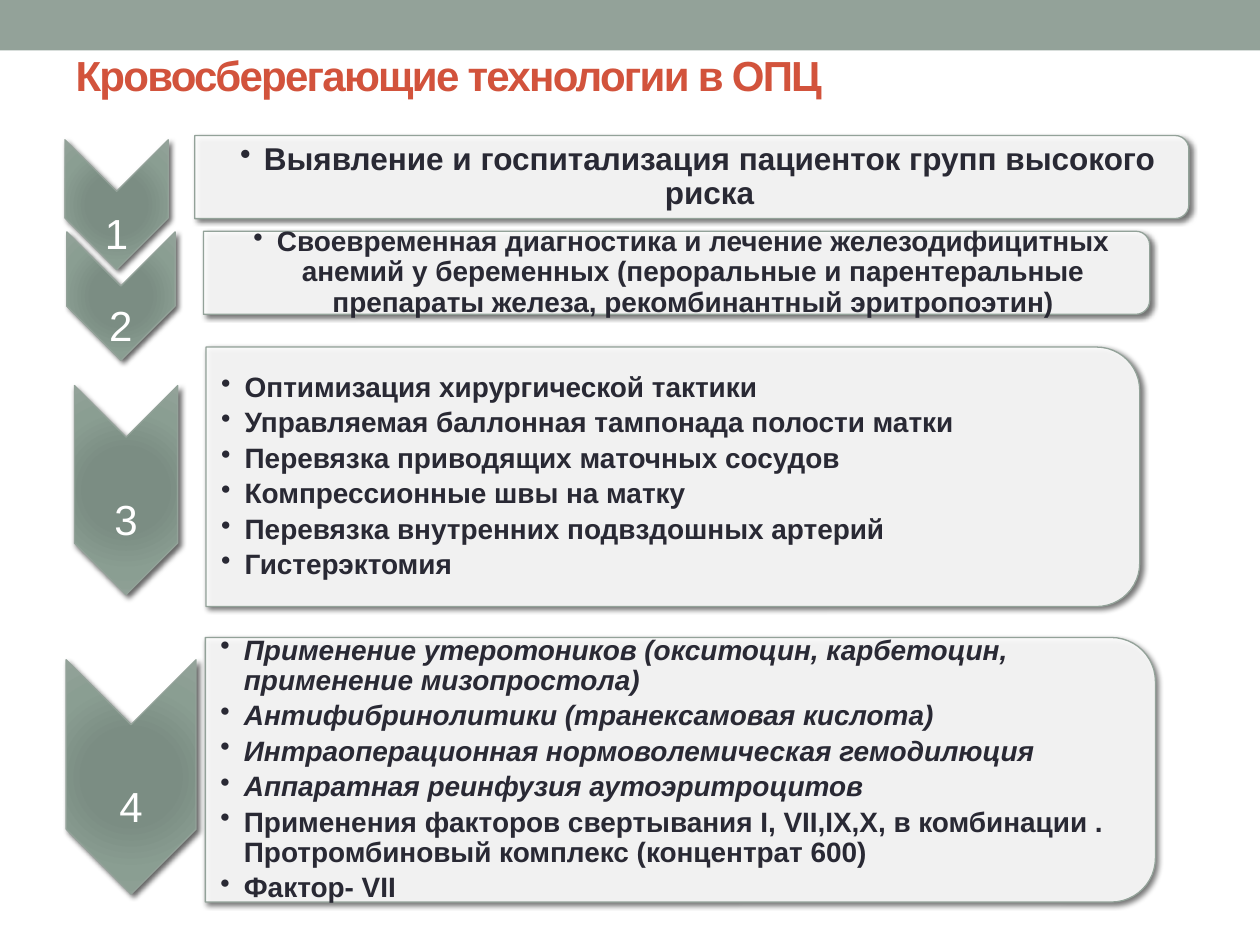
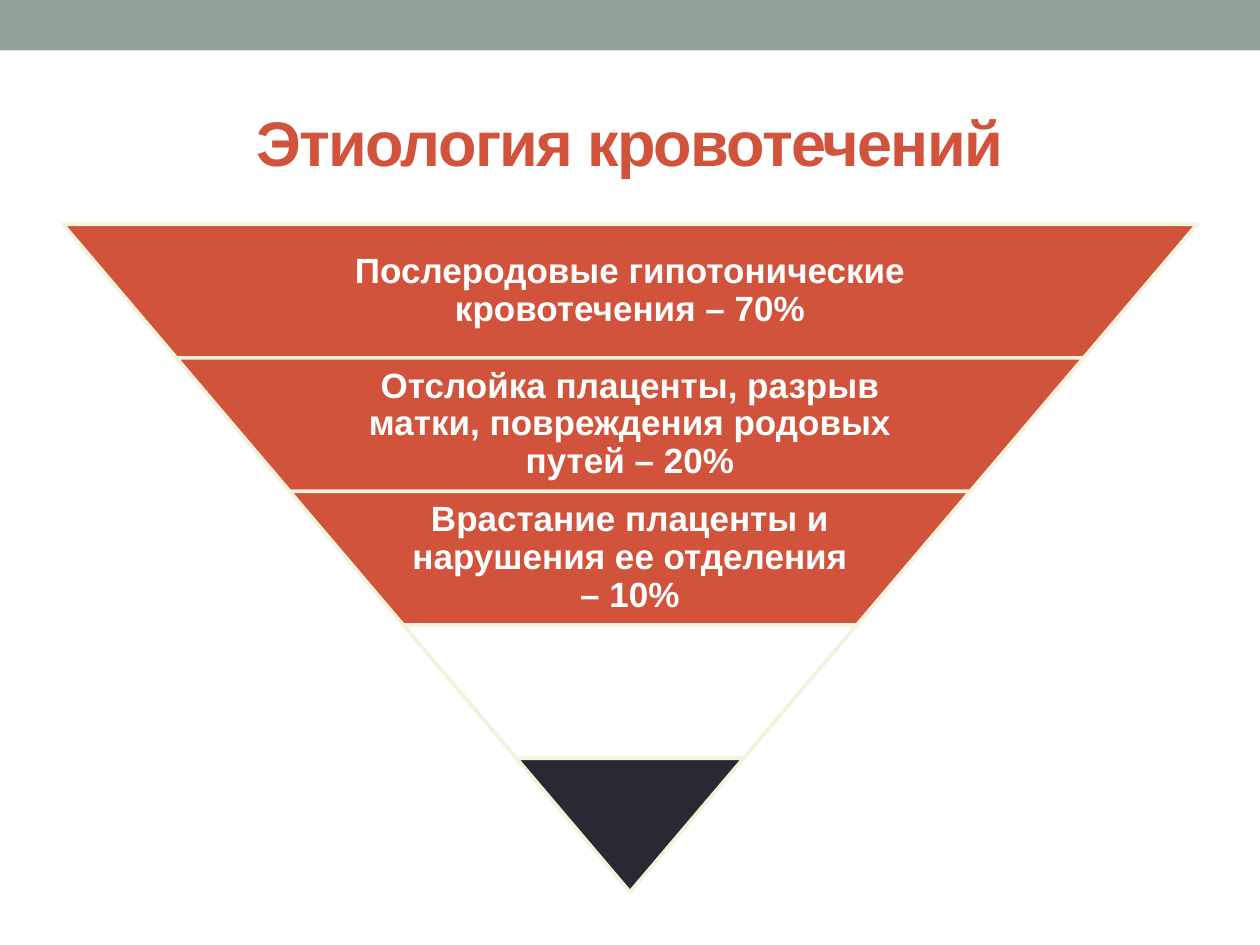
"""Build two slides on blood-saving methods and the causes of haemorrhage."""
from pptx import Presentation
from pptx.dml.color import RGBColor
from pptx.enum.shapes import MSO_SHAPE
from pptx.enum.text import MSO_ANCHOR, MSO_AUTO_SIZE, PP_ALIGN
from pptx.oxml import parse_xml
from pptx.oxml.ns import nsdecls, qn
from pptx.util import Pt

FONT = "Arial"
SAGE = "93A299"
RED = "D2533C"
INK = "292934"
WHITE = "FFFFFF"
CREAM = "F3F2DC"

CHEVRON_STOPS = [(0, "7B8E82"), (34, "7B8D83"), (70, "8A9E92"), (100, SAGE)]
CHEVRON_GRADIENT = (
    f'<a:gradFill {nsdecls("a")} rotWithShape="1"><a:gsLst>'
    + "".join(
        f'<a:gs pos="{position * 1000}"><a:srgbClr val="{color}"/></a:gs>'
        for position, color in CHEVRON_STOPS
    )
    + '</a:gsLst><a:path path="circle">'
    '<a:fillToRect l="100000" t="100000" r="100000" b="100000"/>'
    "</a:path></a:gradFill>"
)
SHADOW = (
    f'<a:outerShdw {nsdecls("a")} blurRad="38100" dist="25400" dir="2700000" '
    'rotWithShape="0"><a:srgbClr val="000000"><a:alpha val="60000"/></a:srgbClr></a:outerShdw>'
)
OPACITY = f'<a:alpha {nsdecls("a")} val="90000"/>'


def add_turned(slide, kind, center_x, center_y, width, height, rotation, fill, line, line_width):
    """Add a rotated shape around its centre."""
    shape = slide.shapes.add_shape(
        kind, Pt(center_x - width / 2), Pt(center_y - height / 2), Pt(width), Pt(height)
    )
    shape.rotation = rotation
    shape.shadow.inherit = False
    shape.fill.solid()
    shape.fill.fore_color.rgb = RGBColor.from_string(fill)
    shape.line.color.rgb = RGBColor.from_string(line)
    shape.line.width = Pt(line_width)
    return shape


def add_text(slide, left, center_y, width, height, lines, size, color, bold, align, margins,
             bulleted=False):
    """Add a vertically centred text box with one paragraph per line."""
    box = slide.shapes.add_textbox(Pt(left), Pt(center_y - height / 2), Pt(width), Pt(height))
    frame = box.text_frame
    frame.word_wrap = True
    frame.vertical_anchor = MSO_ANCHOR.MIDDLE
    frame.margin_left = Pt(margins[0])
    frame.margin_top = frame.margin_right = frame.margin_bottom = Pt(margins[1])
    frame.text = "\n".join(lines)
    for paragraph in frame.paragraphs:
        paragraph.alignment = align
        paragraph.line_spacing = 0.9
        if bulleted:
            paragraph.space_after = Pt(3)
            properties = paragraph._p.get_or_add_pPr()
            properties.set("marL", str(Pt(13.5)))
            properties.set("indent", str(Pt(-13.5)))
            properties.append(parse_xml(f'<a:buChar {nsdecls("a")} char="•"/>'))
        for run in paragraph.runs:
            run.font.name = FONT
            run.font.size = Pt(size)
            run.font.bold = bold
            run.font.color.rgb = RGBColor.from_string(color)
    return frame


presentation = Presentation()
presentation.slide_width = Pt(720)
presentation.slide_height = Pt(540)
layout = presentation.slide_layouts[5]

titles = [
    ("Кровосберегающие технологии в ОПЦ", 36, 21.6, 647.3, 42.5, 24, PP_ALIGN.LEFT),
    ("Этиология кровотечений", 36, 41.8, 648, 77.8, 36, PP_ALIGN.CENTER),
]
for text, left, top, width, height, size, align in titles:
    slide = presentation.slides.add_slide(layout)
    title = slide.shapes.title
    title.left, title.top, title.width, title.height = Pt(left), Pt(top), Pt(width), Pt(height)
    title.text_frame.text = text
    title.text_frame.auto_size = MSO_AUTO_SIZE.NONE
    title.text_frame.vertical_anchor = MSO_ANCHOR.MIDDLE
    paragraph = title.text_frame.paragraphs[0]
    paragraph.alignment = align
    run = paragraph.runs[0]
    run.font.name = FONT
    run.font.size = Pt(size)
    run.font.bold = True
    run.font.color.rgb = RGBColor.from_string(RED)
    run.font._element.set("spc", "-100")

methods_slide, causes_slide = presentation.slides

band = methods_slide.shapes.add_shape(MSO_SHAPE.RECTANGLE, 0, 0, Pt(720), Pt(28.8))
band.shadow.inherit = False
band.fill.solid()
band.fill.fore_color.rgb = RGBColor.from_string(SAGE)
band.line.fill.background()
layout.shapes.element.insert(2, band.element)

steps = [
    ((66.6, 117, 74.2, 59), (395.3, 101.2, 568.1, 47.5), 18, PP_ALIGN.CENTER, 10, [
        "Выявление и госпитализация пациенток групп высокого риска",
    ]),
    ((69.1, 169.2, 73.4, 61.9), (386.6, 155.9, 540.7, 47.5), 16, PP_ALIGN.CENTER, 8.6, [
        "Своевременная диагностика и лечение железодифицитных анемий у беременных "
        "(пероральные и парентеральные препараты железа, рекомбинантный эритропоэтин)",
    ]),
    ((72, 280.1, 119.5, 59), (384.5, 272.5, 533.5, 148.3), 16, PP_ALIGN.LEFT, 8.6, [
        "Оптимизация хирургической тактики",
        "Управляемая баллонная тампонада полости матки",
        "Перевязка приводящих маточных сосудов",
        "Компрессионные швы на матку",
        "Перевязка внутренних подвздошных артерий",
        "Гистерэктомия",
    ]),
    ((74.9, 473.8 - 29.8, 133.9, 74.2), (388.8, 439.9, 542.9, 151.2), 16, PP_ALIGN.LEFT, 8.6, [
        "Применение утеротоников (окситоцин, карбетоцин, применение мизопростола)",
        "Антифибринолитики (транексамовая кислота)",
        "Интраоперационная нормоволемическая гемодилюция",
        "Аппаратная реинфузия аутоэритроцитов",
        "Применения факторов свертывания I, VII,IX,X, в комбинации . "
        "Протромбиновый комплекс (концентрат 600)",
        "Фактор- VII",
    ]),
]
for number, (chevron_box, panel_box, size, align, indent, lines) in enumerate(steps, 1):
    center_x, center_y, length, thickness = chevron_box
    chevron = add_turned(methods_slide, MSO_SHAPE.CHEVRON, *chevron_box, 90, SAGE, SAGE, 0.75)
    properties = chevron.element.spPr
    properties.replace(properties.find(qn("a:solidFill")), parse_xml(CHEVRON_GRADIENT))
    add_text(methods_slide, center_x - thickness / 2, center_y + 18, thickness, 30,
             [str(number)], 24, WHITE, False, PP_ALIGN.CENTER, (1.4, 1.4))

    center_x, center_y, width, height = panel_box
    panel = add_turned(methods_slide, MSO_SHAPE.ROUND_2_SAME_RECTANGLE, center_x, center_y,
                       height, width, 90, WHITE, SAGE, 0.75)
    panel.element.spPr.find(qn("a:solidFill"))[0].append(parse_xml(OPACITY))
    for shape in (chevron, panel):
        shape.element.spPr.find(qn("a:effectLst")).append(parse_xml(SHADOW))
    frame = add_text(methods_slide, center_x - width / 2, center_y, width - 0.05 * height,
                     0.9 * height, lines, size, INK, True, align, (indent, 0.7), True)
    if number == 4:
        for paragraph in frame.paragraphs[:4]:
            paragraph.runs[0].font.italic = True

tiers = [
    (RED, "Послеродовые гипотонические кровотечения – 70%"),
    (RED, "Отслойка плаценты, разрыв матки, повреждения родовых путей – 20%"),
    (RED, "Врастание плаценты и нарушения ее отделения – 10%"),
    (WHITE, ""),
    (INK, ""),
]
tier_height = 76.3
for index, (color, text) in enumerate(tiers):
    width = 648 * (1 - index / len(tiers))
    center_y = 128.2 + tier_height * (index + 0.5)
    tier = add_turned(causes_slide, MSO_SHAPE.TRAPEZOID, 360, center_y, width, tier_height,
                      180, color, CREAM, 2.08)
    tier.adjustments[0] = 64.8 / tier_height
    if text:
        text_width = 0.65 * width
        add_text(causes_slide, 360 - text_width / 2, center_y, text_width, tier_height,
                 [text], 20, WHITE, True, PP_ALIGN.CENTER, (2, 2))

presentation.save("out.pptx")
